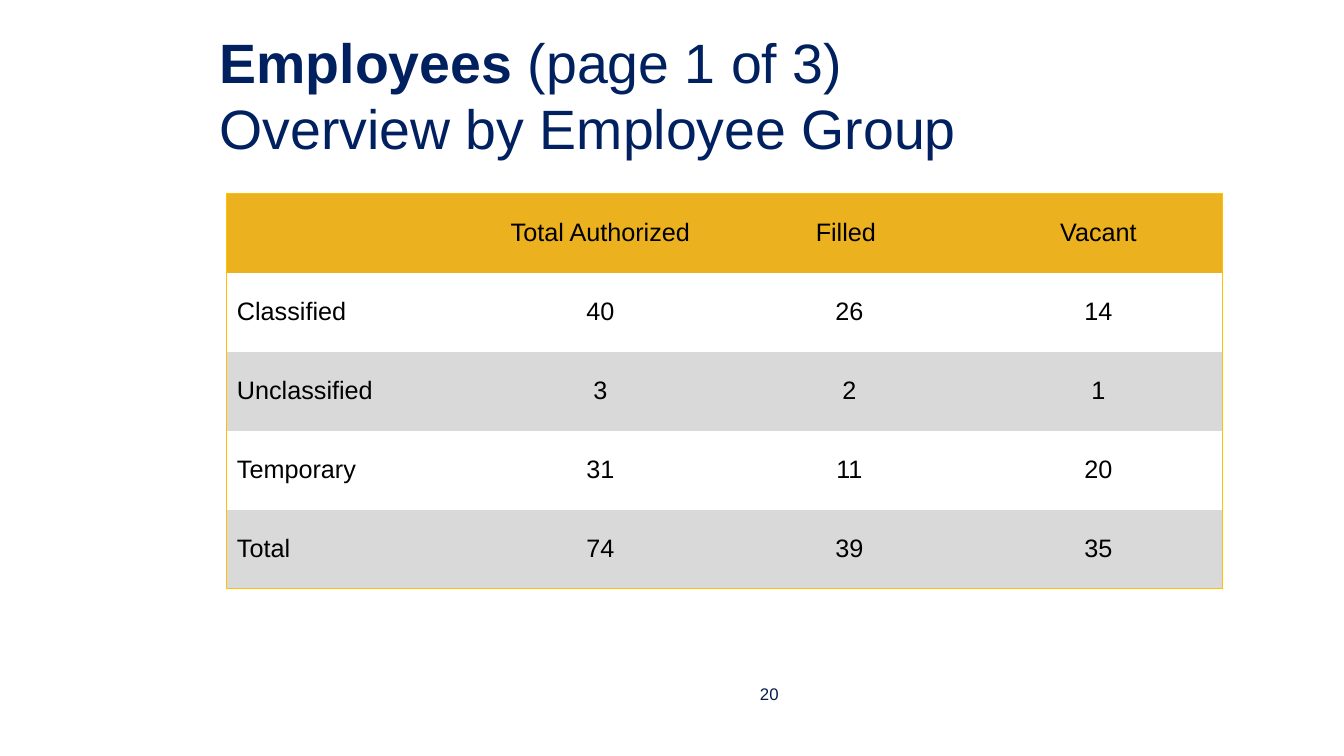
from lxml import etree
from pptx import Presentation
from pptx.dml.color import RGBColor
from pptx.enum.text import MSO_ANCHOR, PP_ALIGN
from pptx.oxml.ns import qn
from pptx.util import Inches, Pt

MIDDLE = MSO_ANCHOR.MIDDLE
LEFT, CENTER = PP_ALIGN.LEFT, PP_ALIGN.CENTER
FONT = "Arial"
COLORS = {
    "title": "002060",
    "page": "051C4B",
    "text": "000000",
    "head": "EBB11E",
    "band": "D9D9D9",
    "edge": "FFC000",
}
ROWS = [
    ["", "Total Authorized", "Filled ", "Vacant"],
    ["Classified", "40", "26", "14"],
    ["Unclassified", "3", "2", "1"],
    ["Temporary", "31", "11", "20"],
    ["Total", "74", "39", "35"],
]


def style(par, size, color, align=LEFT):
    par.alignment = align
    for run in par.runs:
        run.font.name = FONT
        run.font.size = Pt(size)
        run.font.color.rgb = RGBColor.from_string(COLORS[color])


def add_text(slide, box, text):
    frame = slide.shapes.add_textbox(*map(Inches, box)).text_frame
    frame.word_wrap = True
    frame.vertical_anchor = MIDDLE
    frame.text = text
    return frame.paragraphs[0]


def add_title(slide, box):
    par = add_text(slide, box, "Employees ")
    par.runs[0].font.bold = True
    par.add_run().text = "(page 1 of 3)"
    par.add_line_break()
    par.add_run().text = "Overview by Employee Group"
    style(par, 39.6, "title")


def add_page(slide, box):
    style(add_text(slide, box, "20"), 12, "page", CENTER)


def set_edges(cell, edges):
    props = cell._tc.get_or_add_tcPr()
    for spot, (side, drawn) in enumerate(edges.items()):
        line = etree.Element(qn(f"a:ln{side}"), w=str(Pt(1)))
        if drawn:
            fill = etree.SubElement(line, qn("a:solidFill"))
            etree.SubElement(fill, qn("a:srgbClr"), val=COLORS["edge"])
        else:
            etree.SubElement(line, qn("a:noFill"))
        props.insert(spot, line)


def set_fill(cell, row):
    if row % 2:
        cell.fill.background()
    else:
        cell.fill.solid()
        name = "band" if row else "head"
        cell.fill.fore_color.rgb = RGBColor.from_string(COLORS[name])


def add_grid(slide, box):
    high, wide = len(ROWS), len(ROWS[0])
    table = slide.shapes.add_table(high, wide, *map(Inches, box)).table
    table.first_row = False
    table.horz_banding = False
    for row, texts in enumerate(ROWS):
        for col, text in enumerate(texts):
            cell = table.cell(row, col)
            cell.text = text
            cell.vertical_anchor = MIDDLE
            style(cell.text_frame.paragraphs[0], 18, "text", CENTER if col else LEFT)
            set_fill(cell, row)
            set_edges(cell, {
                "L": col == 0,
                "R": col == wide - 1,
                "T": row == 0,
                "B": row == high - 1,
            })


def main():
    deck = Presentation()
    deck.slide_width, deck.slide_height = Inches(13.33), Inches(7.5)
    slide = deck.slides.add_slide(deck.slide_layouts[6])
    add_title(slide, (2.08, 0.31, 11.1, 1.25))
    add_page(slide, (7.29, 6.68, 0.68, 0.4))
    add_grid(slide, (2.25, 1.92, 9.88, 3.92))
    deck.save("out.pptx")


if __name__ == "__main__":
    main()
